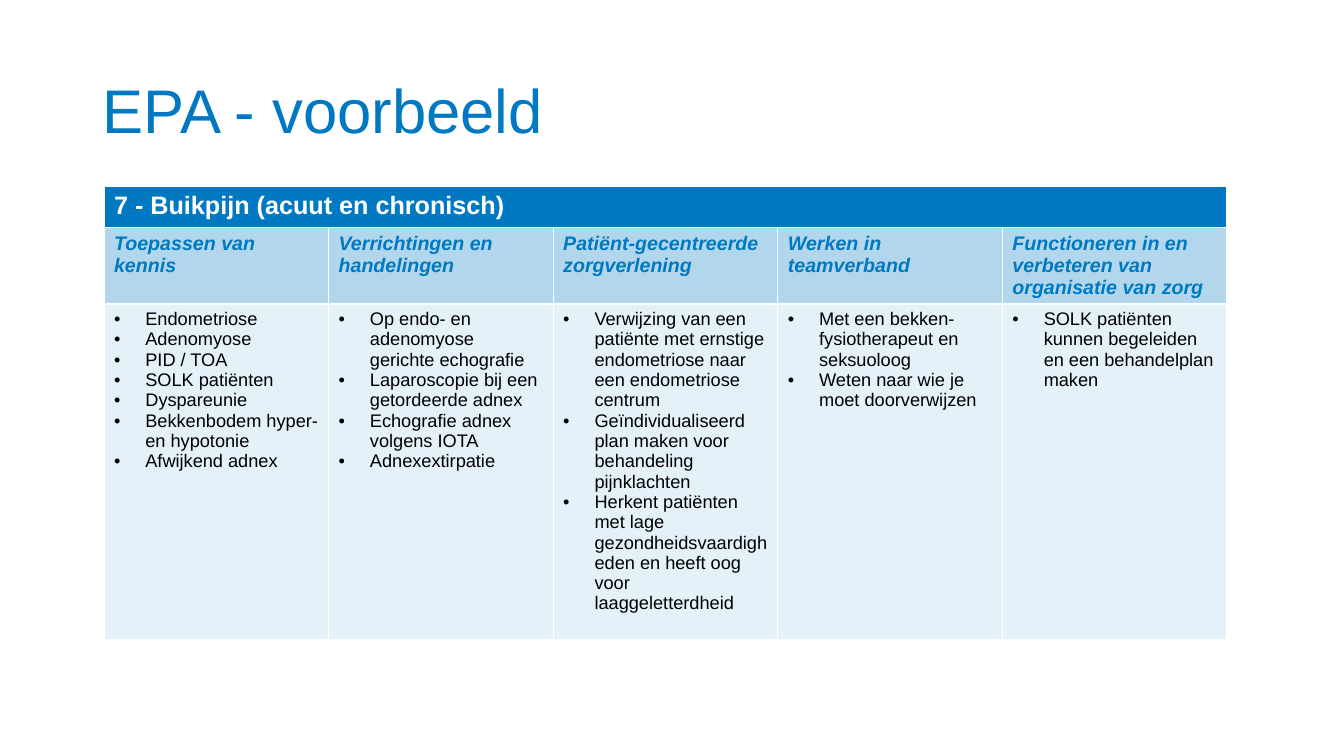
from lxml.etree import SubElement
from pptx import Presentation
from pptx.dml.color import RGBColor
from pptx.enum.text import MSO_ANCHOR, MSO_AUTO_SIZE, PP_ALIGN
from pptx.oxml import parse_xml
from pptx.oxml.ns import nsdecls, qn
from pptx.util import Cm, Pt

BLUE = RGBColor(0x00, 0x79, 0xC2)
WHITE = RGBColor(0xFF, 0xFF, 0xFF)
BLACK = RGBColor(0x00, 0x00, 0x00)

COMPETENCES = {
    "Toepassen van kennis": [
        "Endometriose",
        "Adenomyose",
        "PID / TOA",
        "SOLK patiënten",
        "Dyspareunie",
        "Bekkenbodem hyper- en hypotonie",
        "Afwijkend adnex",
    ],
    "Verrichtingen en handelingen": [
        "Op endo- en adenomyose gerichte echografie",
        "Laparoscopie bij een getordeerde adnex",
        "Echografie adnex volgens IOTA",
        "Adnexextirpatie",
    ],
    "Patiënt-gecentreerde zorgverlening": [
        "Verwijzing van een patiënte met ernstige endometriose naar een endometriose centrum",
        "Geïndividualiseerd plan maken voor behandeling pijnklachten",
        "Herkent patiënten met lage gezondheidsvaardigheden en heeft oog voor laaggeletterdheid",
    ],
    "Werken in teamverband": [
        "Met een bekken-fysiotherapeut en seksuoloog",
        "Weten naar wie je moet doorverwijzen",
    ],
    "Functioneren in en verbeteren van organisatie van zorg": [
        "SOLK patiënten kunnen begeleiden en een behandelplan maken",
    ],
}


class SlideBuilder:
    font_name = "Arial"

    def __init__(self, presentation):
        self.slide = presentation.slides.add_slide(presentation.slide_layouts[5])

    def style(self, paragraph, size, color, bold=False, italic=False):
        for run in paragraph.runs:
            font = run.font
            font.name, font.size = self.font_name, Pt(size)
            font.bold, font.italic = bold, italic
            font.color.rgb = color

    def title(self, text, left, top, width, height):
        shape = self.slide.shapes.title
        shape.left, shape.top, shape.width, shape.height = left, top, width, height
        text_frame = shape.text_frame
        text_frame.text = text
        text_frame.auto_size = MSO_AUTO_SIZE.NONE
        text_frame.vertical_anchor = MSO_ANCHOR.MIDDLE
        paragraph = text_frame.paragraphs[0]
        paragraph.alignment = PP_ALIGN.LEFT
        paragraph.line_spacing = 0.9
        self.style(paragraph, 44, BLUE)

    def table(self, left, top, column_width, row_heights, column_count):
        table = self.slide.shapes.add_table(
            len(row_heights), column_count, left, top,
            column_width * column_count, sum(row_heights),
        ).table
        table.first_row = table.horz_banding = False
        for column in table.columns:
            column.width = column_width
        for row, height in zip(table.rows, row_heights):
            row.height = height
        return table

    def cell(self, cell, lines, size, color, opacity=100, bulleted=False, bold=False, italic=False):
        cell.text_frame.text = "\n".join(lines)
        for paragraph in cell.text_frame.paragraphs:
            if bulleted:
                self.bullet(paragraph)
            self.style(paragraph, size, color, bold, italic)
        cell.fill.solid()
        cell.fill.fore_color.rgb = BLUE
        properties = cell._tc.get_or_add_tcPr()
        if opacity < 100:
            fill_color = properties.find(qn("a:solidFill")).find(qn("a:srgbClr"))
            SubElement(fill_color, qn("a:alpha")).set("val", str(opacity * 1000))
        for position, side in enumerate("LRTB"):
            properties.insert(position, parse_xml(
                f'<a:ln{side} {nsdecls("a")} w="{Pt(1)}"><a:solidFill>'
                f'<a:srgbClr val="{WHITE}"/></a:solidFill></a:ln{side}>'
            ))

    def bullet(self, paragraph):
        properties = paragraph._p.get_or_add_pPr()
        indent = Cm(0.79)
        properties.set("marL", str(indent))
        properties.set("indent", str(-indent))
        SubElement(properties, qn("a:buFont")).set("typeface", self.font_name)
        SubElement(properties, qn("a:buChar")).set("char", "•")


def main():
    presentation = Presentation()
    presentation.slide_width, presentation.slide_height = Cm(33.87), Cm(19.05)
    builder = SlideBuilder(presentation)
    builder.title("EPA - voorbeeld", Cm(2.33), Cm(1.01), Cm(29.21), Cm(3.68))

    row_heights = [Cm(1.04), Cm(1.93), Cm(8.46)]
    table = builder.table(Cm(2.62), Cm(4.69), Cm(5.66), row_heights, len(COMPETENCES))
    heading = table.cell(0, 0)
    heading.merge(table.cell(0, len(COMPETENCES) - 1))
    builder.cell(heading, ["7 - Buikpijn (acuut en chronisch)"], 18, WHITE, bold=True)
    for column, (competence, examples) in enumerate(COMPETENCES.items()):
        builder.cell(table.cell(1, column), [competence], 14, BLUE, 30, bold=True, italic=True)
        builder.cell(table.cell(2, column), examples, 13, BLACK, 10, bulleted=True)

    presentation.save("out.pptx")


if __name__ == "__main__":
    main()
